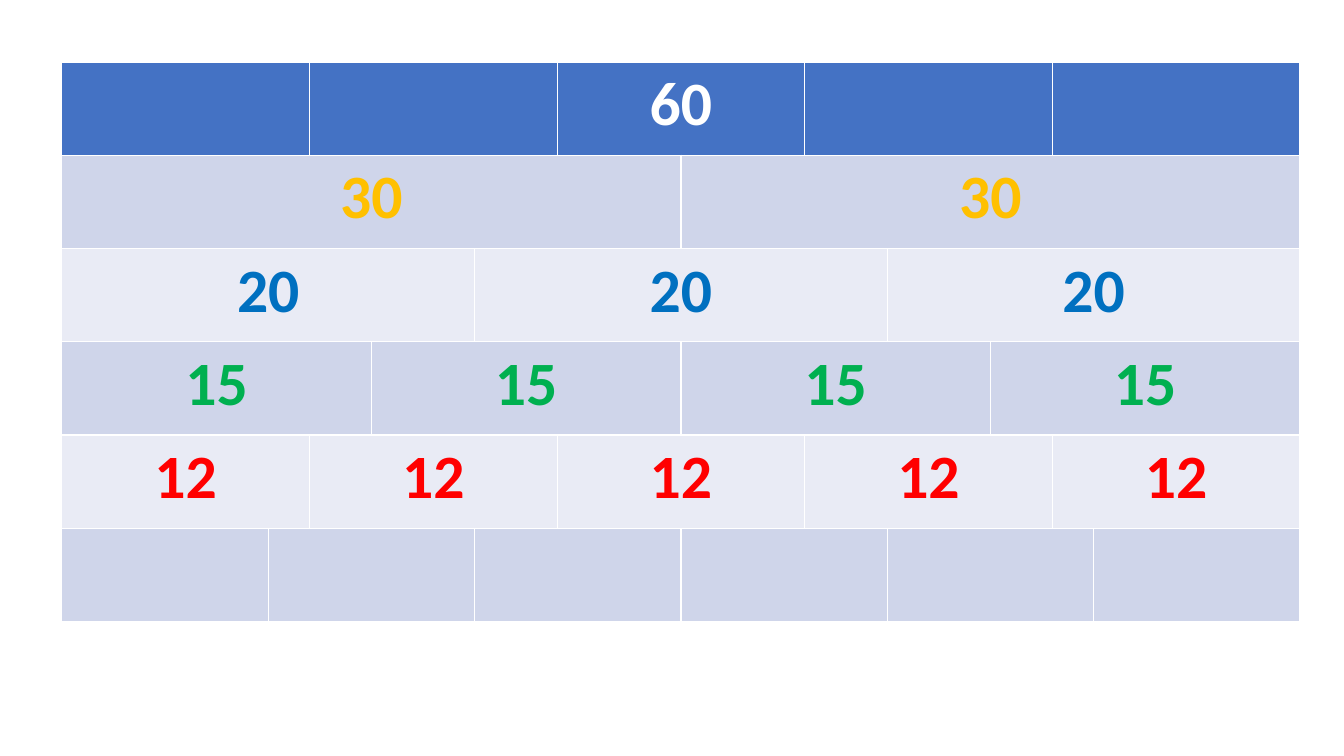
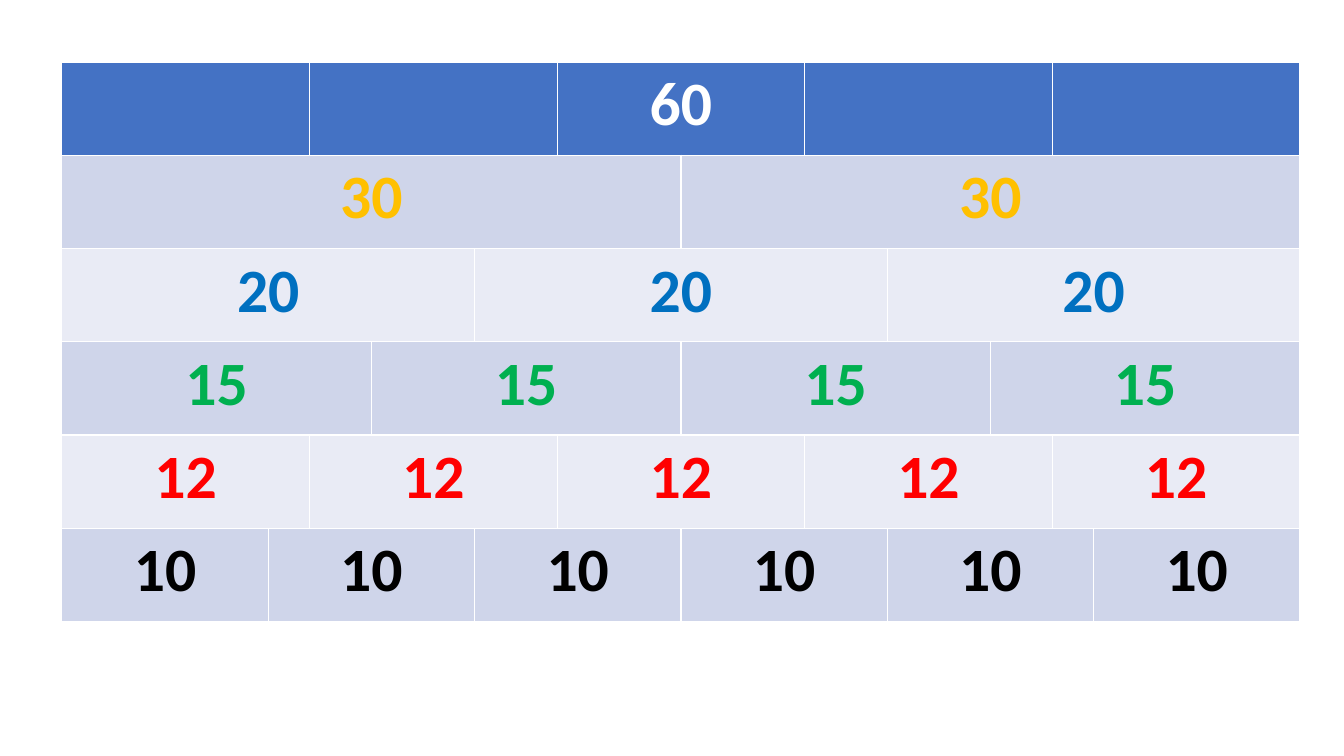
from lxml import etree
from pptx import Presentation
from pptx.dml.color import RGBColor
from pptx.enum.text import PP_ALIGN
from pptx.oxml.ns import qn
from pptx.util import Cm, Pt

CENTER = PP_ALIGN.CENTER
BLANK_LAYOUT = 6
FONT = "Calibri"
COLORS = {
    "header": "4472C4", "dark band": "CFD5EA", "light band": "E9EBF5",
    "white": "FFFFFF", "gold": "FFC000", "blue": "0070C0",
    "green": "00B050", "red": "FF0000", "black": "000000",
}

# The whole bar is worth 60, so every part is measured in sixtieths
WHOLE = 60
UNIT = 0.52
ROW_HEIGHT = 2.35
LEFT = TOP = 1.56

# One row each: labels of its equal parts, band colour, text colour
HEADER_ROW = (["", "", "60", "", ""], "header", "white")
SPLIT_ROWS = [
    (["30"] * 2, "dark band", "gold"),
    (["20"] * 3, "light band", "blue"),
    (["15"] * 4, "dark band", "green"),
    (["12"] * 5, "light band", "red"),
]
SIXTHS_EMPTY = ([""] * 6, "dark band", "black")
SIXTHS_FILLED = (["10"] * 6, "dark band", "black")


def rgb(name):
    return RGBColor.from_string(COLORS[name])


def add_borders(cell):
    properties = cell._tc.get_or_add_tcPr()
    for side in ("a:lnL", "a:lnR", "a:lnT", "a:lnB"):
        line = etree.SubElement(properties, qn(side), w=str(Pt(1)))
        fill = etree.SubElement(line, qn("a:solidFill"))
        etree.SubElement(fill, qn("a:srgbClr"), val=COLORS["white"])


def fill_row(table, row, edges, labels, band, color):
    """Split one row into equal merged parts and label them."""
    for column in range(len(edges) - 1):
        cell = table.cell(row, column)
        add_borders(cell)
        cell.fill.solid()
        cell.fill.fore_color.rgb = rgb(band)

    size = WHOLE // len(labels)
    for part, label in enumerate(labels):
        first = edges.index(part * size)
        last = edges.index((part + 1) * size) - 1
        cell = table.cell(row, first)
        if last > first:
            cell.merge(table.cell(row, last))
        para = cell.text_frame.paragraphs[0]
        para.text = label
        para.alignment = CENTER
        para.font.name = FONT
        para.font.size = Pt(44)
        para.font.bold = True
        para.font.color.rgb = rgb(color)


def add_fraction_wall(page, left, top, rows):
    # Columns run between all the edges that any row needs
    counts = [len(labels) for labels, _, _ in rows]
    edges = sorted({part * WHOLE // count
                    for count in counts for part in range(count + 1)})
    table = page.shapes.add_table(
        len(rows), len(edges) - 1, Cm(left), Cm(top),
        Cm(WHOLE * UNIT), Cm(len(rows) * ROW_HEIGHT)).table
    for column, start, end in zip(table.columns, edges, edges[1:]):
        column.width = Cm((end - start) * UNIT)
    for index, (labels, band, color) in enumerate(rows):
        table.rows[index].height = Cm(ROW_HEIGHT)
        fill_row(table, index, edges, labels, band, color)


def main():
    deck = Presentation()
    deck.slide_width = Cm(33.87)
    deck.slide_height = Cm(19.05)
    for sixths in (SIXTHS_EMPTY, SIXTHS_FILLED):
        page = deck.slides.add_slide(deck.slide_layouts[BLANK_LAYOUT])
        add_fraction_wall(page, LEFT, TOP, [HEADER_ROW, *SPLIT_ROWS, sixths])
    deck.save("out.pptx")


if __name__ == "__main__":
    main()
